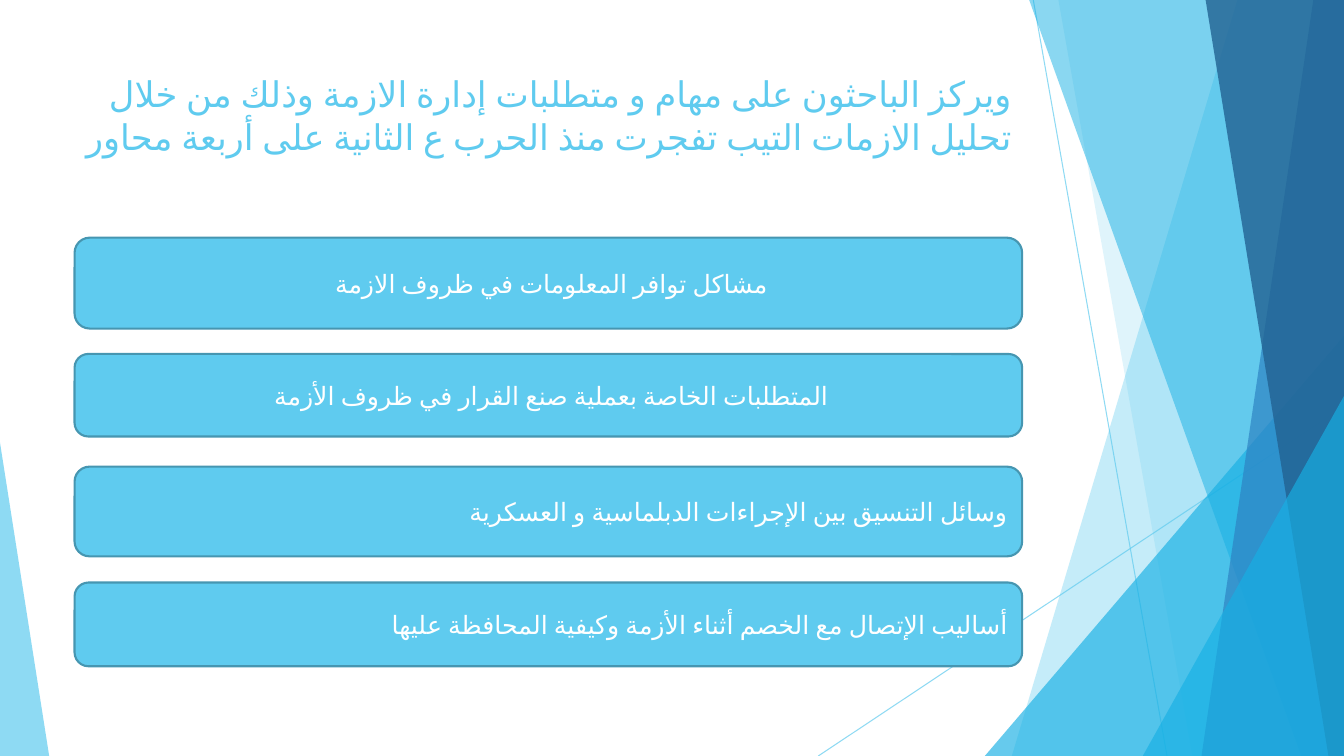
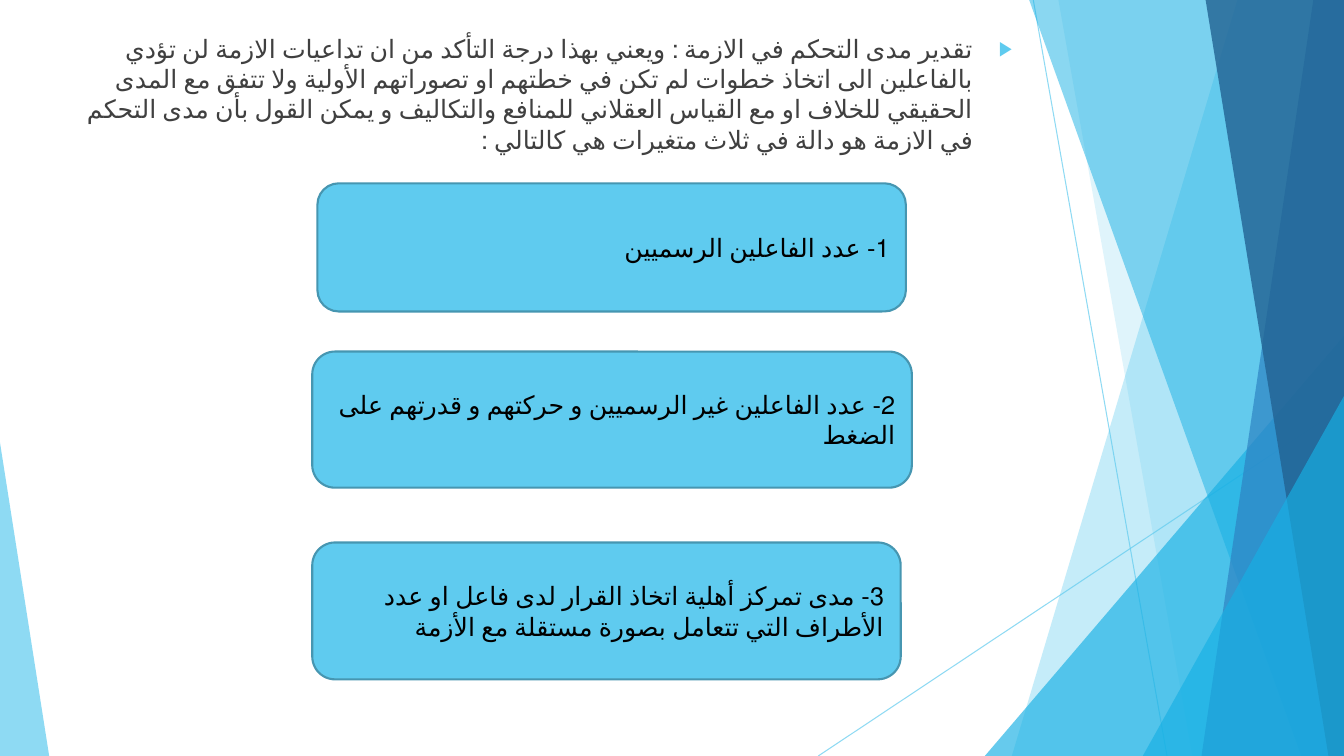
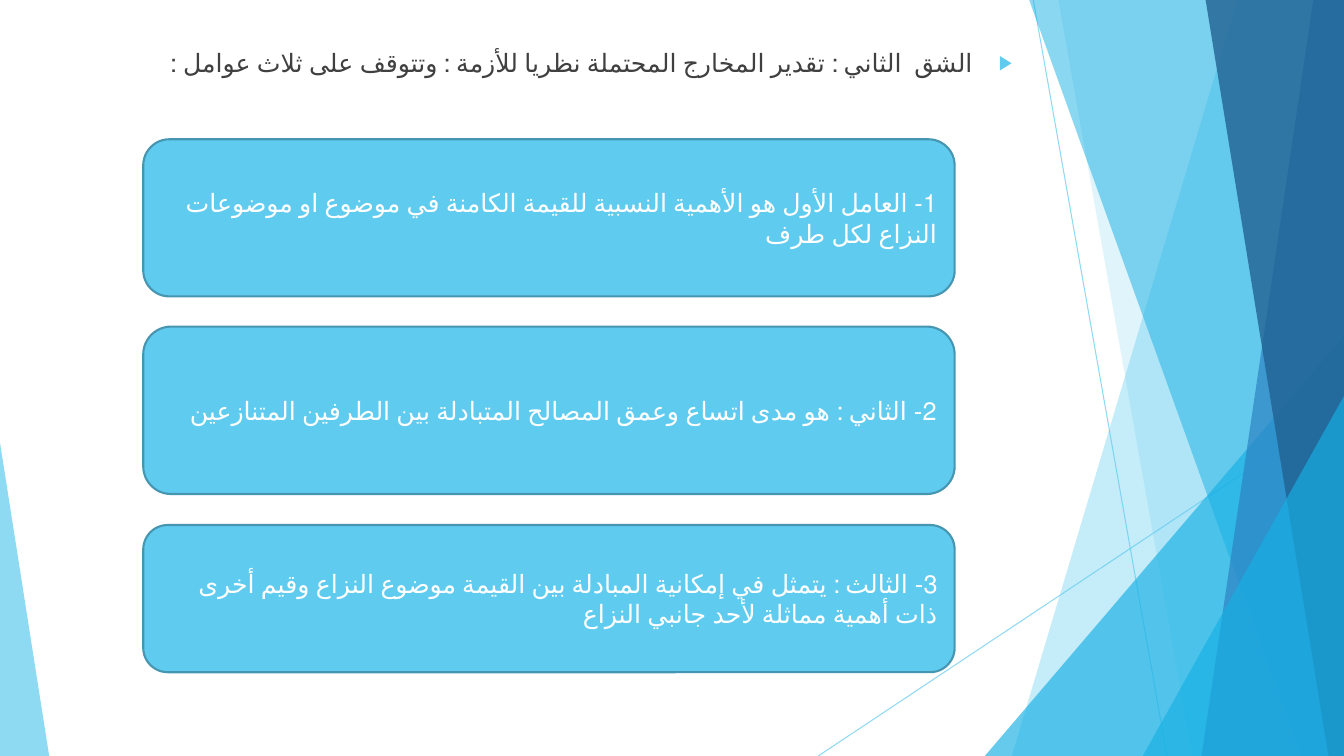
from dataclasses import dataclass

from pptx import Presentation
from pptx.dml.color import RGBColor
from pptx.enum.lang import MSO_LANGUAGE_ID
from pptx.enum.shapes import MSO_CONNECTOR, MSO_SHAPE
from pptx.enum.text import MSO_ANCHOR, MSO_AUTO_SIZE, PP_ALIGN
from pptx.oxml.ns import qn
from pptx.util import Cm, Pt
from lxml.etree import SubElement


@dataclass(frozen=True)
class Theme:
    font: str = "Lato"
    sky: str = "5FCBEF"
    cyan: str = "17B0E4"
    blue: str = "2E83C3"
    navy: str = "226292"
    outline: str = "4696B1"
    body: str = "404040"
    white: str = "FFFFFF"
    black: str = "000000"
    title_size: float = 25.2
    text_size: float = 18
    bullet_indent: float = 0.97
    box_line: float = 1.5
    thin_line: float = 0.75


THEME = Theme()
WIDTH, HEIGHT = 33.87, 19.05
MARGIN, CONTENT_WIDTH = 1.88, 23.88
TITLE_TOP, TITLE_HEIGHT = 1.7, 3.66
TITLE_ONLY, TITLE_AND_CONTENT = 5, 1

# Backdrop panels reach the right edge: top x, bottom x, colour, opacity
BACK_PANELS = [(31.19, 25.5, THEME.sky, 36), (26.67, 30.05, THEME.sky, 20)]
FRONT_PANELS = [
    (25.93, 32.79, THEME.cyan, 50),
    (33.1, 30.28, THEME.blue, 70),
    (30.38, 33.48, THEME.navy, 80),
]

# Content: text, top, height and, where needed, further box format
AXES_TITLE = (
    "ويركز الباحثون على مهام و متطلبات إدارة الازمة وذلك من خلال "
    "تحليل الازمات التيب تفجرت منذ الحرب ع الثانية على أربعة محاور "
)
AXES = [
    ("مشاكل توافر المعلومات في ظروف الازمة ", 5.99, 2.29, PP_ALIGN.CENTER),
    ("المتطلبات الخاصة بعملية صنع القرار في ظروف الأزمة ", 8.92, 2.08, PP_ALIGN.CENTER),
    ("وسائل التنسيق بين الإجراءات الدبلماسية و العسكرية ", 11.76, 2.26, PP_ALIGN.RIGHT),
    ("أساليب الإتصال مع الخصم أثناء الأزمة وكيفية المحافظة عليها", 14.68, 2.11, PP_ALIGN.RIGHT),
]
CONTROL_INTRO = (
    "تقدير مدى التحكم في الازمة : ويعني بهذا درجة التأكد من ان تداعيات الازمة "
    "لن تؤدي بالفاعلين الى اتخاذ خطوات لم تكن في خطتهم او تصوراتهم الأولية "
    "ولا تتفق مع المدى الحقيقي للخلاف او مع القياس العقلاني للمنافع والتكاليف "
    "و يمكن القول بأن مدى التحكم في الازمة هو دالة في ثلاث متغيرات هي كالتالي : "
)
VARIABLES = [
    ("1- عدد الفاعلين الرسميين ", 8, 4.62, 14.83, 3.23),
    ("2- عدد الفاعلين غير الرسميين و حركتهم و قدرتهم على الضغط ", 7.87, 8.86, 15.11, 3.43),
    ("3- مدى تمركز أهلية اتخاذ القرار لدى فاعل او عدد الأطراف التي تتعامل "
     "بصورة مستقلة مع الأزمة ", 7.87, 13.67, 14.83, 3.45),
]
OUTCOMES_INTRO = (
    "الشق  الثاني : تقدير المخارج المحتملة نظريا للأزمة : وتتوقف على ثلاث عوامل : "
)
FACTORS = [
    ("1- العامل الأول هو الأهمية النسبية للقيمة الكامنة في موضوع او موضوعات "
     "النزاع لكل طرف ", 3.51, 3.96),
    ("2- الثاني : هو مدى اتساع وعمق المصالح المتبادلة بين الطرفين المتنازعين", 8.23, 4.22),
    ("3- الثالث : يتمثل في إمكانية المبادلة بين القيمة موضوع النزاع وقيم أخرى "
     "ذات أهمية مماثلة لأحد جانبي النزاع ", 13.23, 3.71),
]


# Formatting helpers
def set_opacity(part, percent):
    for color in part.element.spPr.iter(qn("a:srgbClr")):
        SubElement(color, qn("a:alpha"), val=str(percent * 1000))


def paint(part, color, opacity=100):
    part.shadow.inherit = False
    part.fill.solid()
    part.fill.fore_color.rgb = RGBColor.from_string(color)
    part.line.fill.background()
    if opacity < 100:
        set_opacity(part, opacity)


def place(part, left, top, width, height):
    part.left, part.top = Cm(left), Cm(top)
    part.width, part.height = Cm(width), Cm(height)


def add_bullet(paragraph):
    paragraph.space_before = Pt(10)
    props = paragraph._p.get_or_add_pPr()
    indent = Cm(THEME.bullet_indent)
    props.set("marL", str(indent))
    props.set("indent", str(-indent))
    SubElement(SubElement(props, qn("a:buClr")), qn("a:srgbClr"), val=THEME.sky)
    SubElement(props, qn("a:buSzPct"), val="80000")
    SubElement(props, qn("a:buChar"), char="▶")


def write(part, text, size=THEME.text_size, color=THEME.white,
          align=PP_ALIGN.RIGHT, anchor=MSO_ANCHOR.MIDDLE, bullet=False):
    frame = part.text_frame
    frame.word_wrap = True
    frame.auto_size = MSO_AUTO_SIZE.NONE
    frame.vertical_anchor = anchor
    paragraph = frame.paragraphs[0]
    paragraph.alignment = align
    paragraph._p.get_or_add_pPr().set("rtl", "1")
    if bullet:
        add_bullet(paragraph)
    run = paragraph.add_run()
    run.text = text
    run.font.name = THEME.font
    run.font.language_id = MSO_LANGUAGE_ID.ARABIC
    run.font.size = Pt(size)
    run.font.color.rgb = RGBColor.from_string(color)


# Backdrop elements
def add_ray(slide, x1, y1, x2, y2):
    ray = slide.shapes.add_connector(
        MSO_CONNECTOR.STRAIGHT, Cm(x1), Cm(y1), Cm(x2), Cm(y2))
    ray.line.color.rgb = RGBColor.from_string(THEME.sky)
    ray.line.width = Pt(THEME.thin_line)
    set_opacity(ray, 70)
    SubElement(ray.element.spPr, qn("a:effectLst"))
    return ray


def add_panel(slide, top_x, bottom_x, color, opacity):
    top = Cm(-0.02)
    outline = slide.shapes.build_freeform(Cm(top_x), top)
    outline.add_line_segments(
        [(Cm(WIDTH), top), (Cm(WIDTH), Cm(HEIGHT)), (Cm(bottom_x), Cm(HEIGHT))])
    panel = outline.convert_to_shape()
    paint(panel, color, opacity)
    return panel


def add_corner(slide, left, top, width, color, opacity, apex):
    corner = slide.shapes.add_shape(
        MSO_SHAPE.ISOSCELES_TRIANGLE, Cm(left), Cm(top), Cm(width), Cm(HEIGHT - top))
    corner.adjustments[0] = apex
    paint(corner, color, opacity)
    return corner


def build_master(prs, slide):
    """Draw the backdrop on a slide, then move it to the master."""
    master = prs.slide_master
    backdrop = [
        add_ray(slide, 26.04, 0, 29.41, HEIGHT),
        add_ray(slide, WIDTH, 10.24, 20.62, HEIGHT),
        *[add_panel(slide, *panel) for panel in BACK_PANELS],
        add_corner(slide, 24.82, 8.46, 9.05, THEME.cyan, 66, apex=1),
        *[add_panel(slide, *panel) for panel in FRONT_PANELS],
        add_corner(slide, 28.8, 9.98, 5.07, THEME.cyan, 66, apex=1),
        add_corner(slide, 0, 11.15, 1.24, THEME.sky, 70, apex=0),
    ]
    for order, part in enumerate(backdrop):
        part.element.xpath(".//p:cNvPr")[0].set("id", str(100 + order))
        master.shapes.element.insert(2 + order, part.element)
    place(master.placeholders[0], MARGIN, TITLE_TOP, CONTENT_WIDTH, TITLE_HEIGHT)


# Slide elements
def add_slide(prs, layout):
    return prs.slides.add_slide(prs.slide_layouts[layout])


def add_title(slide, text):
    title = slide.shapes.title
    place(title, MARGIN, TITLE_TOP, CONTENT_WIDTH, TITLE_HEIGHT)
    write(title, text, size=THEME.title_size, color=THEME.sky, anchor=MSO_ANCHOR.TOP)


def add_intro(slide, text, top):
    title = slide.shapes.title.element
    title.getparent().remove(title)
    intro = slide.placeholders[1]
    place(intro, MARGIN, top, CONTENT_WIDTH, HEIGHT - top)
    write(intro, text, color=THEME.body, anchor=MSO_ANCHOR.TOP, bullet=True)


def add_box(slide, text, left, top, width, height, **text_format):
    box = slide.shapes.add_shape(
        MSO_SHAPE.ROUNDED_RECTANGLE, Cm(left), Cm(top), Cm(width), Cm(height))
    paint(box, THEME.sky)
    box.line.color.rgb = RGBColor.from_string(THEME.outline)
    box.line.width = Pt(THEME.box_line)
    write(box, text, **text_format)


def main():
    prs = Presentation()
    prs.slide_width, prs.slide_height = Cm(WIDTH), Cm(HEIGHT)

    # Four axes
    axes = add_slide(prs, TITLE_ONLY)
    build_master(prs, axes)
    add_title(axes, AXES_TITLE)
    for text, top, height, align in AXES:
        add_box(axes, text, MARGIN, top, CONTENT_WIDTH, height, align=align)

    # Three variables of control
    control = add_slide(prs, TITLE_AND_CONTENT)
    add_intro(control, CONTROL_INTRO, top=0.71)
    for text, *position in VARIABLES:
        add_box(control, text, *position, color=THEME.black)

    # Three factors of the outcomes
    outcomes = add_slide(prs, TITLE_AND_CONTENT)
    add_intro(outcomes, OUTCOMES_INTRO, top=1.07)
    for text, top, height in FACTORS:
        add_box(outcomes, text, 3.61, top, 20.45, height)

    prs.save("out.pptx")


if __name__ == "__main__":
    main()
